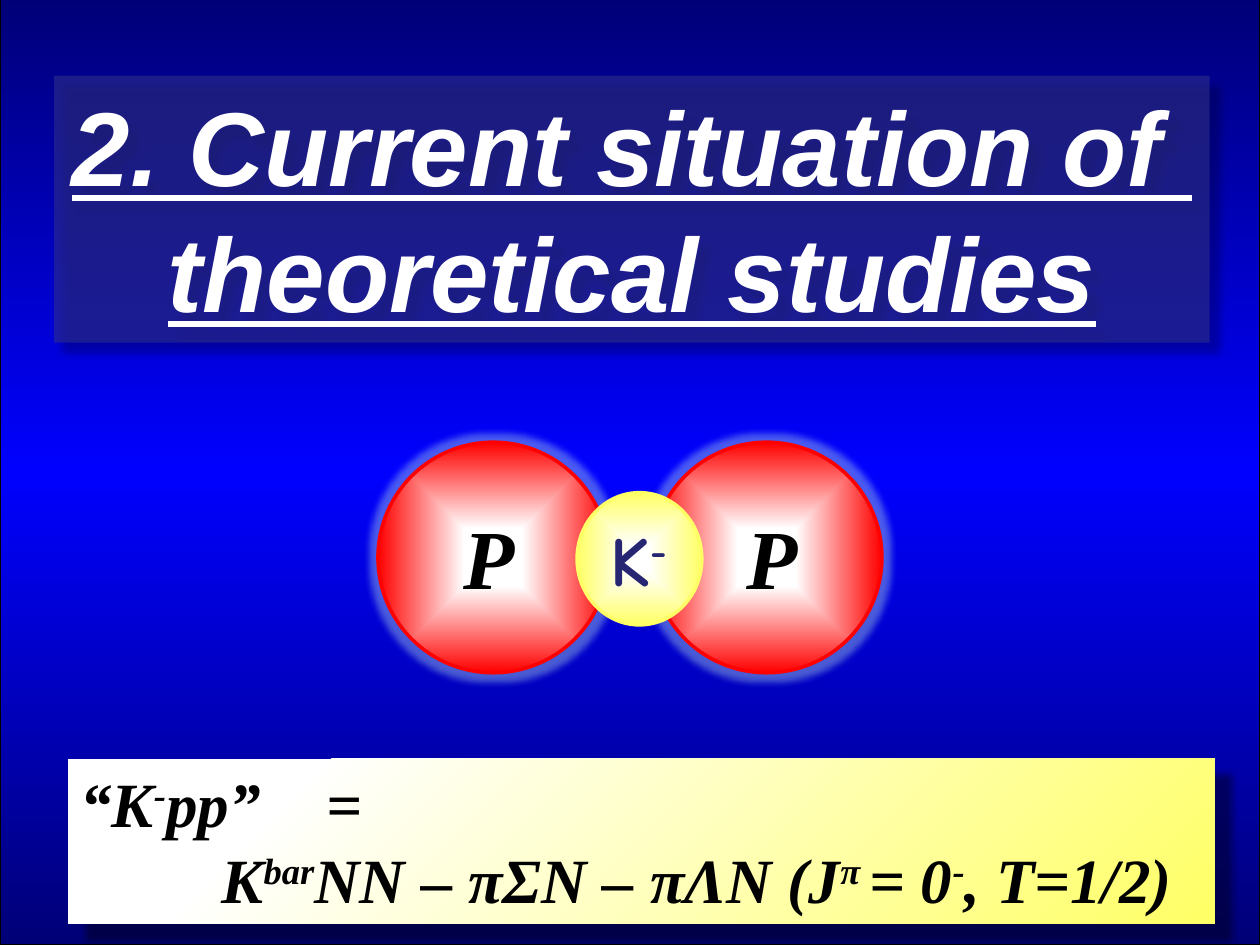
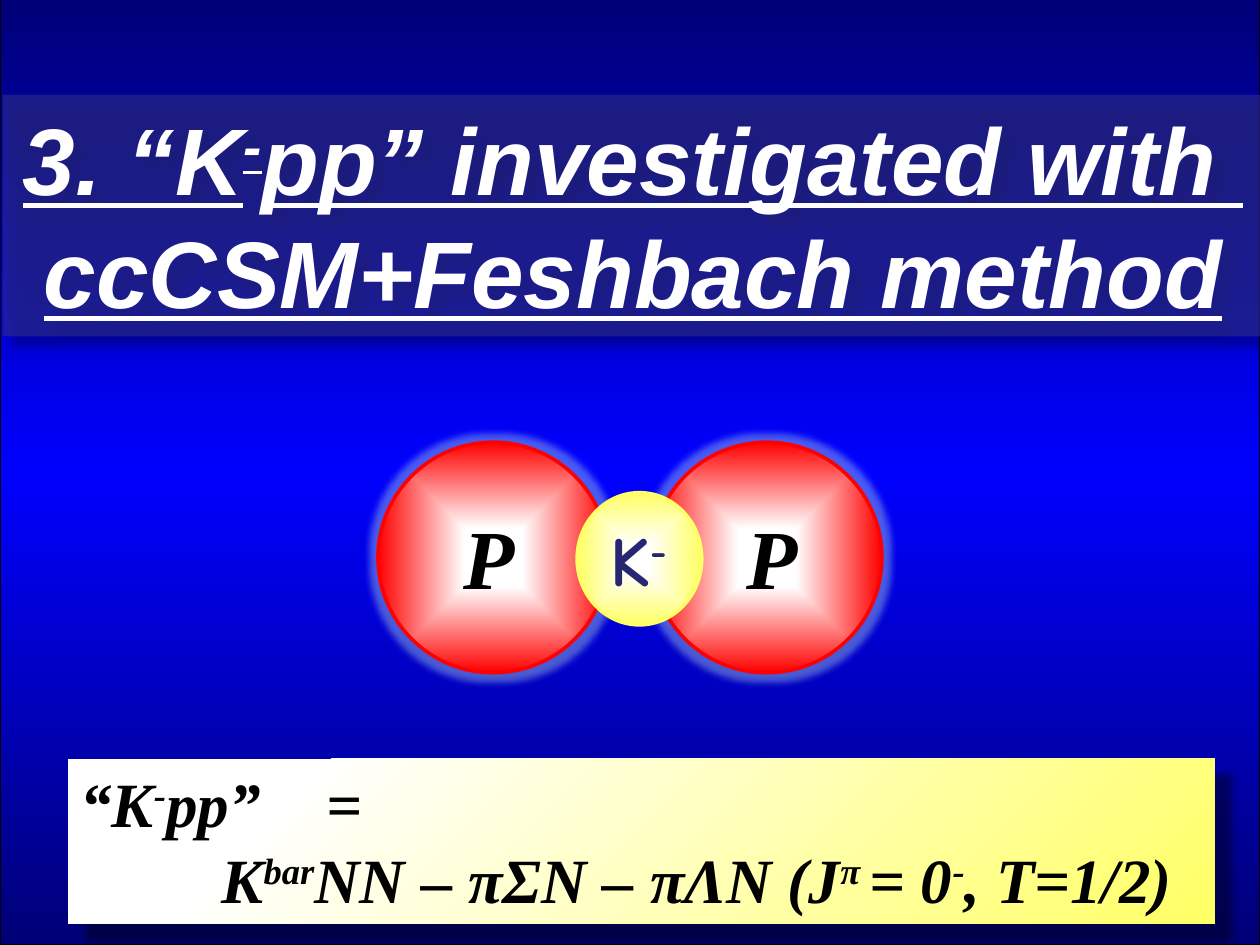
from lxml import etree
from pptx import Presentation
from pptx.dml.color import RGBColor
from pptx.enum.shapes import MSO_SHAPE
from pptx.enum.text import MSO_ANCHOR, MSO_AUTO_SIZE, PP_ALIGN
from pptx.oxml.ns import qn
from pptx.util import Inches, Pt

RECTANGLE, OVAL = MSO_SHAPE.RECTANGLE, MSO_SHAPE.OVAL
LEFT, CENTER = PP_ALIGN.LEFT, PP_ALIGN.CENTER
TOP, FIT_SHAPE = MSO_ANCHOR.TOP, MSO_AUTO_SIZE.SHAPE_TO_FIT_TEXT

# Content: a paragraph is a list of runs; a run is (text, is superscript)
SECTIONS = [
    {"box": (0.43, 0.6, 9.17, 2.12), "size": 60, "title": [
        [("2. Current situation of ", False)],
        [("theoretical studies", False)]]},
    {"box": (0.02, 0.75, 10.01, 1.92), "size": 54, "title": [
        [("3. “K", False), ("-", True), ("pp” investigated with ", False)],
        [("ccCSM+Feshbach method", False)]]},
]
FORMULA = [
    [("“K", False), ("-", True), ("pp”\t=", False)],
    [("K", False), ("bar", True), ("NN – πΣN – πΛN (J", False), ("π ", True),
     ("= 0", False), ("-", True), (", T=1/2)", False)],
]
PROTON = [[("P", False)]]
KAON = [[("K", False), ("-", True)]]

# Shared look
COLORS = {"edge": "000076", "middle": "0000FF", "black": "000000", "white": "FFFFFF",
          "title_band": "2D2D8A", "proton": "FF0000", "kaon": "FFFF66",
          "kaon_text": "262673", "glow": "B8E3E6"}
SERIF = {"font": "Times New Roman", "color": "black", "italic": True}
TITLE = {"font": "Arial", "color": "white", "italic": True, "underline": True}
KAON_STYLE = {"font": "Comic Neue", "color": "kaon_text", "italic": False}

# Layout in inches
BACKDROP_BOX = (0, -0.03, 10, 7.53)
FORMULA_BOX = (0.54, 6.02, 9.1, 1.31)
PROTON_LEFTS = (3, 5.17)
PROTON_LABEL_LEFTS = (3.58, 5.83)
PROTON_TOP, PROTON_DIAMETER = 3.51, 1.83
EQUALS_TAB, FORMULA_INDENT = 1.95, 1.12


def color(name):
    return RGBColor.from_string(COLORS[name])


def add_child(parent, tag, **attributes):
    return etree.SubElement(parent, qn(tag), {k: str(v) for k, v in attributes.items()})


def add_color(parent, name, opacity=None):
    element = add_child(parent, "a:srgbClr", val=COLORS[name])
    if opacity is not None:
        add_child(element, "a:alpha", val=opacity * 1000)


def fill_gradient(shape, stops, angle=None):
    """Linear gradient at an angle, or from the centre outwards without one."""
    shape.fill.background()
    properties = shape._element.spPr
    gradient = etree.Element(qn("a:gradFill"), rotWithShape="1")
    stop_list = add_child(gradient, "a:gsLst")
    for position, name in stops:
        add_color(add_child(stop_list, "a:gs", pos=position * 1000), name)
    if angle is None:
        center = add_child(gradient, "a:path", path="shape")
        add_child(center, "a:fillToRect", l=50000, t=50000, r=50000, b=50000)
    else:
        add_child(gradient, "a:lin", ang=angle * 60000, scaled=1)
    properties.replace(properties.find(qn("a:noFill")), gradient)


def add_effect(shape, tag, name, opacity, **attributes):
    effects = shape._element.spPr.find(qn("a:effectLst"))
    add_color(add_child(effects, tag, **attributes), name, opacity)


def add_shadow(shape, distance):
    add_effect(shape, "a:outerShdw", "black", 40, blurRad=Pt(4), dist=Pt(distance),
               dir=45 * 60000, algn="tl", rotWithShape=0)


def add_shape(shapes, kind, box, line=None, width=1):
    shape = shapes.add_shape(kind, *map(Inches, box))
    shape.shadow.inherit = False
    if line:
        shape.line.color.rgb = color(line)
        shape.line.width = Pt(width)
    else:
        shape.line.fill.background()
    return shape


def write_text(shape, paragraphs, size, style, align=LEFT, wrap=False):
    frame = shape.text_frame
    frame.word_wrap = wrap
    frame.auto_size = FIT_SHAPE
    frame.vertical_anchor = TOP
    for index, runs in enumerate(paragraphs):
        paragraph = frame.add_paragraph() if index else frame.paragraphs[0]
        paragraph.alignment = align
        for text, raised in runs:
            run = paragraph.add_run()
            run.text = text
            font = run.font
            font.name, font.size, font.bold = style["font"], Pt(size), True
            font.italic = style["italic"]
            font.underline = style.get("underline", False)
            font.color.rgb = color(style["color"])
            if raised:
                run._r.get_or_add_rPr().set("baseline", "30000")


def add_label(shapes, box, paragraphs, size, style):
    write_text(shapes.add_textbox(*map(Inches, box)), paragraphs, size, style)


def add_backdrop(slide):
    backdrop = add_shape(slide.shapes, RECTANGLE, BACKDROP_BOX, "black")
    fill_gradient(backdrop, [(0, "edge"), (50, "middle"), (100, "edge")], 90)


def add_title(slide, section):
    band = add_shape(slide.shapes, RECTANGLE, section["box"])
    band.fill.solid()
    band.fill.fore_color.rgb = color("title_band")
    fill_color = band._element.spPr.find(qn("a:solidFill"))[0]
    add_child(fill_color, "a:alpha", val=60000)
    add_shadow(band, 8)
    write_text(band, section["title"], section["size"], TITLE, CENTER)


def add_particles(slide):
    shapes = slide.shapes.add_group_shape().shapes
    # Two protons
    for left, label_left in zip(PROTON_LEFTS, PROTON_LABEL_LEFTS):
        box = (left, PROTON_TOP, PROTON_DIAMETER, PROTON_DIAMETER)
        proton = add_shape(shapes, OVAL, box, "proton", 2)
        fill_gradient(proton, [(25, "white"), (100, "proton")])
        add_effect(proton, "a:glow", "glow", 40, rad=Pt(8))
        add_label(shapes, (label_left, 3.96, 0.61, 0.91), PROTON, 48, SERIF)
    # Kaon between them
    kaon = add_shape(shapes, OVAL, (4.58, 3.91, 0.99, 1.05), "kaon", 2)
    fill_gradient(kaon, [(14, "white"), (100, "kaon")])
    add_label(shapes, (4.75, 4.05, 0.77, 0.77), KAON, 40, KAON_STYLE)


def add_formula(slide):
    panel = add_shape(slide.shapes, RECTANGLE, FORMULA_BOX)
    fill_gradient(panel, [(19, "white"), (100, "kaon")], 45)
    add_shadow(panel, 13)
    write_text(panel, FORMULA, 36, SERIF, wrap=True)
    name, channels = [p._p.get_or_add_pPr() for p in panel.text_frame.paragraphs]
    add_child(add_child(name, "a:tabLst"), "a:tab", pos=Inches(EQUALS_TAB), algn="l")
    channels.set("marL", str(Inches(FORMULA_INDENT)))
    channels.set("indent", "0")


def main():
    presentation = Presentation()
    presentation.slide_width, presentation.slide_height = Inches(10), Inches(7.5)
    blank = presentation.slide_layouts[6]
    for section in SECTIONS:
        slide = presentation.slides.add_slide(blank)
        add_backdrop(slide)
        add_title(slide, section)
        add_particles(slide)
        add_formula(slide)
    presentation.save("out.pptx")


if __name__ == "__main__":
    main()
